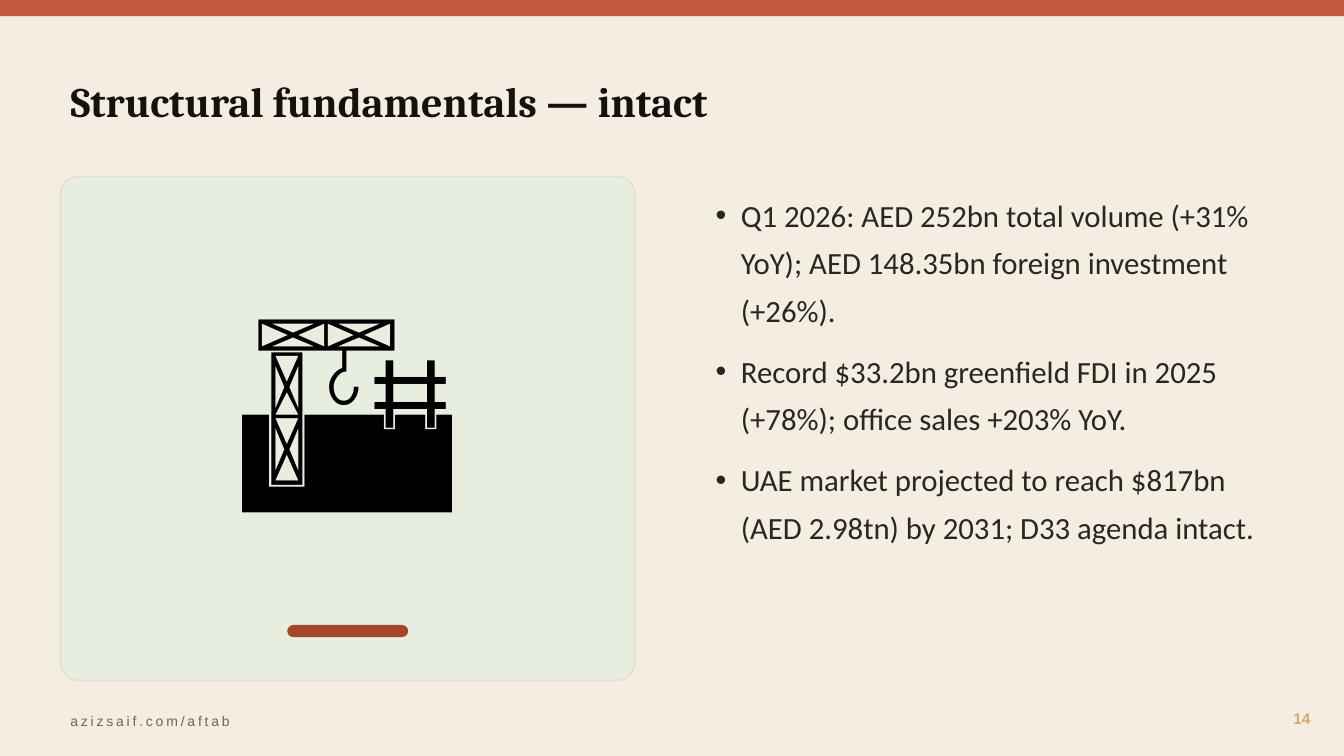
import pptx
import pptx.chart.data
import pptx.dml.color
import pptx.enum.shapes
import pptx.enum.text
import pptx.oxml
import pptx.oxml.ns
import pptx.util

Pt = pptx.util.Pt
RGBColor = pptx.dml.color.RGBColor
SHAPE = pptx.enum.shapes.MSO_SHAPE
ALIGN = pptx.enum.text.PP_ALIGN
ANCHOR = pptx.enum.text.MSO_ANCHOR

CREAM = RGBColor(0xF4, 0xED, 0xE2)
TERRACOTTA = RGBColor(0xC4, 0x5A, 0x3D)
RUST = RGBColor(0xA4, 0x45, 0x2C)
SAGE = RGBColor(0xE8, 0xEE, 0xDF)
SAND = RGBColor(0xE4, 0xDD, 0xD0)
GOLD = RGBColor(0xD9, 0xA8, 0x6C)
INK = RGBColor(0x16, 0x11, 0x0D)
CHARCOAL = RGBColor(0x2A, 0x26, 0x22)
TAUPE = RGBColor(0x6E, 0x66, 0x5C)
BLACK = RGBColor(0, 0, 0)

WIDTH, HEIGHT = 960, 540
MARGIN = 43.2
CARD_WIDTH = 410.4
POINTS = [
    "Q1 2026: AED 252bn total volume (+31% YoY); AED 148.35bn foreign investment (+26%).",
    "Record $33.2bn greenfield FDI in 2025 (+78%); office sales +203% YoY.",
    "UAE market projected to reach $817bn (AED 2.98tn) by 2031; D33 agenda intact.",
]


def place(shape, box):
    """Move a shape to a box of left, top, width and height in points."""
    shape.left, shape.top, shape.width, shape.height = map(Pt, box)


def style(para, name, size, color, bold=False):
    """Set the font of a whole paragraph."""
    font = para.font
    font.name, font.size, font.bold = name, Pt(size), bold
    font.color.rgb = color


def add_panel(page, kind, box, fill, line=None, corner=None):
    """Add a flat filled shape with an optional outline and corner ratio."""
    panel = page.shapes.add_shape(kind, *map(Pt, box))
    panel.shadow.inherit = False
    panel.fill.solid()
    panel.fill.fore_color.rgb = fill
    if line is None:
        panel.line.fill.background()
    else:
        panel.line.color.rgb = line
        panel.line.width = Pt(1)
    if corner is not None:
        panel.adjustments[0] = corner


def add_label(page, box, text, name, size, color, align=ALIGN.LEFT, bold=False):
    """Add one line of vertically centred text and return its paragraph."""
    frame = page.shapes.add_textbox(*map(Pt, box)).text_frame
    frame.word_wrap = True
    frame.vertical_anchor = ANCHOR.MIDDLE
    para = frame.paragraphs[0]
    para.text, para.alignment = text, align
    style(para, name, size, color, bold)
    return para


def fill_title(title, box):
    """Place and format the slide title."""
    place(title, box)
    frame = title.text_frame
    frame.text = "Structural fundamentals — intact"
    frame.auto_size = pptx.enum.text.MSO_AUTO_SIZE.NONE
    frame.vertical_anchor = ANCHOR.MIDDLE
    para = frame.paragraphs[0]
    para.alignment = ALIGN.LEFT
    style(para, "Cambria", 30, INK, True)


def add_card(page, box):
    """Draw the illustration card with its symbol and accent bar."""
    left, top, width, height = box
    add_panel(page, SHAPE.ROUNDED_RECTANGLE, box, SAGE, SAND, 0.036)
    add_label(page, (left, top, width, 295.2), "🏗️", "Calibri", 150, BLACK, ALIGN.CENTER)
    bar_width = 86.4
    bar = (left + (width - bar_width) / 2, top + height - 39.6, bar_width, 8.64)
    add_panel(page, SHAPE.ROUNDED_RECTANGLE, bar, RUST, corner=0.5)


def fill_body(body, box):
    """Place the body placeholder and write the bulleted points."""
    place(body, box)
    frame = body.text_frame
    frame.text = "\n".join(POINTS)
    frame.auto_size = pptx.enum.text.MSO_AUTO_SIZE.NONE
    for para in frame.paragraphs:
        properties = para._p.get_or_add_pPr()
        properties.set("marL", str(Pt(18)))
        properties.set("indent", str(-Pt(18)))
        bullet = pptx.oxml.parse_xml(
            f'<a:buChar {pptx.oxml.ns.nsdecls("a")} char="•"/>')
        properties.append(bullet)
        para.line_spacing = 1.28
        para.space_before, para.space_after = Pt(0), Pt(10)
        style(para, "Calibri", 22, CHARCOAL)


def add_footer(page, box):
    """Add the web address at the left and the page number at the right."""
    left, top, width, height = box
    address = add_label(page, (left, top + 3.6, 576, height - 3.6),
                        "azizsaif.com/aftab", "Arial", 10, TAUPE)
    address.runs[0]._r.get_or_add_rPr().set("spc", "200")
    number_width = 64.8
    add_label(page, (left + width - number_width, top, number_width, height),
              "14", "Arial", 11, GOLD, ALIGN.RIGHT, True)


def build_slide(deck):
    """Build the slide from its regions."""
    page = deck.slides.add_slide(deck.slide_layouts[1])
    page.background.fill.solid()
    page.background.fill.fore_color.rgb = CREAM
    add_panel(page, SHAPE.RECTANGLE, (0, 0, WIDTH, 11.52), TERRACOTTA)
    fill_title(page.shapes.title, (MARGIN, 36, 871.2, 72))
    add_card(page, (MARGIN, 126, CARD_WIDTH, 360))
    fill_body(page.placeholders[1], (504, 129.6, CARD_WIDTH, 360))
    add_footer(page, (MARGIN, 500.4, 900, 25.2))


def main():
    """Create and save the deck."""
    deck = pptx.Presentation()
    deck.slide_width, deck.slide_height = Pt(WIDTH), Pt(HEIGHT)
    build_slide(deck)
    deck.save("out.pptx")


if __name__ == "__main__":
    main()
